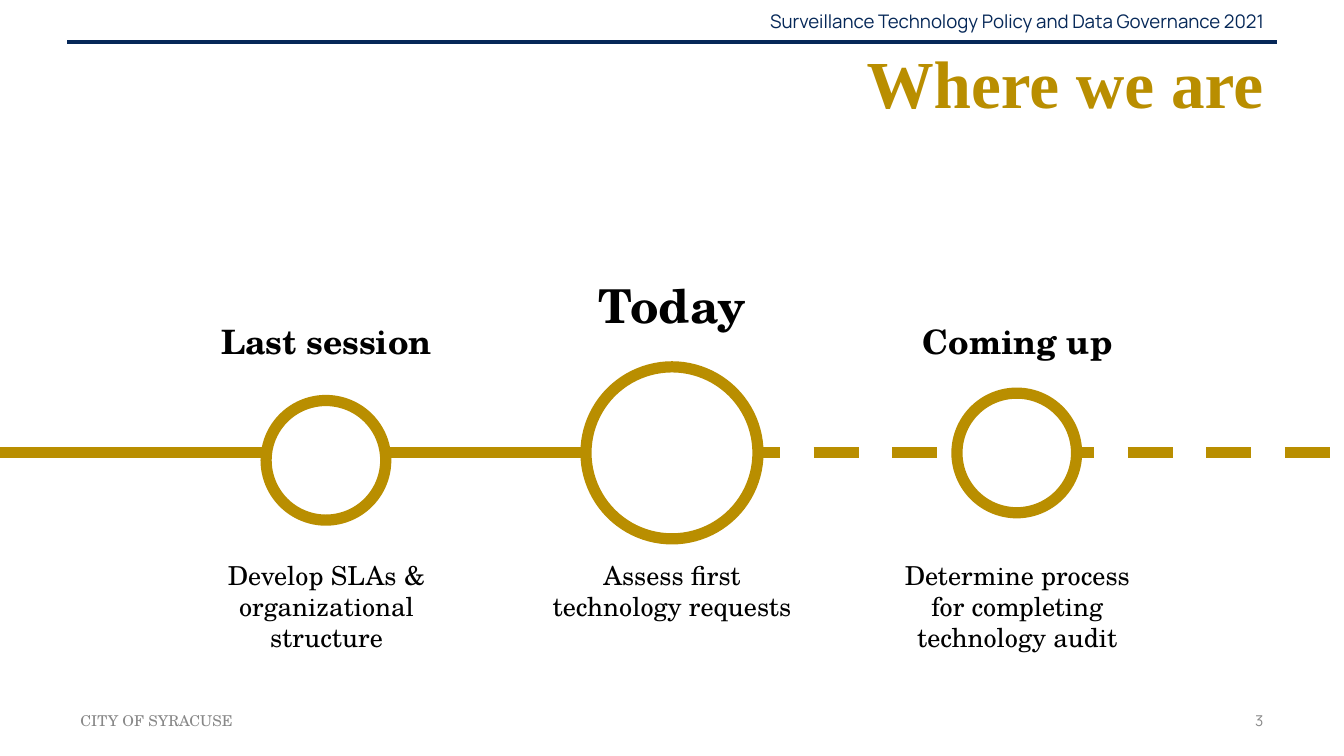
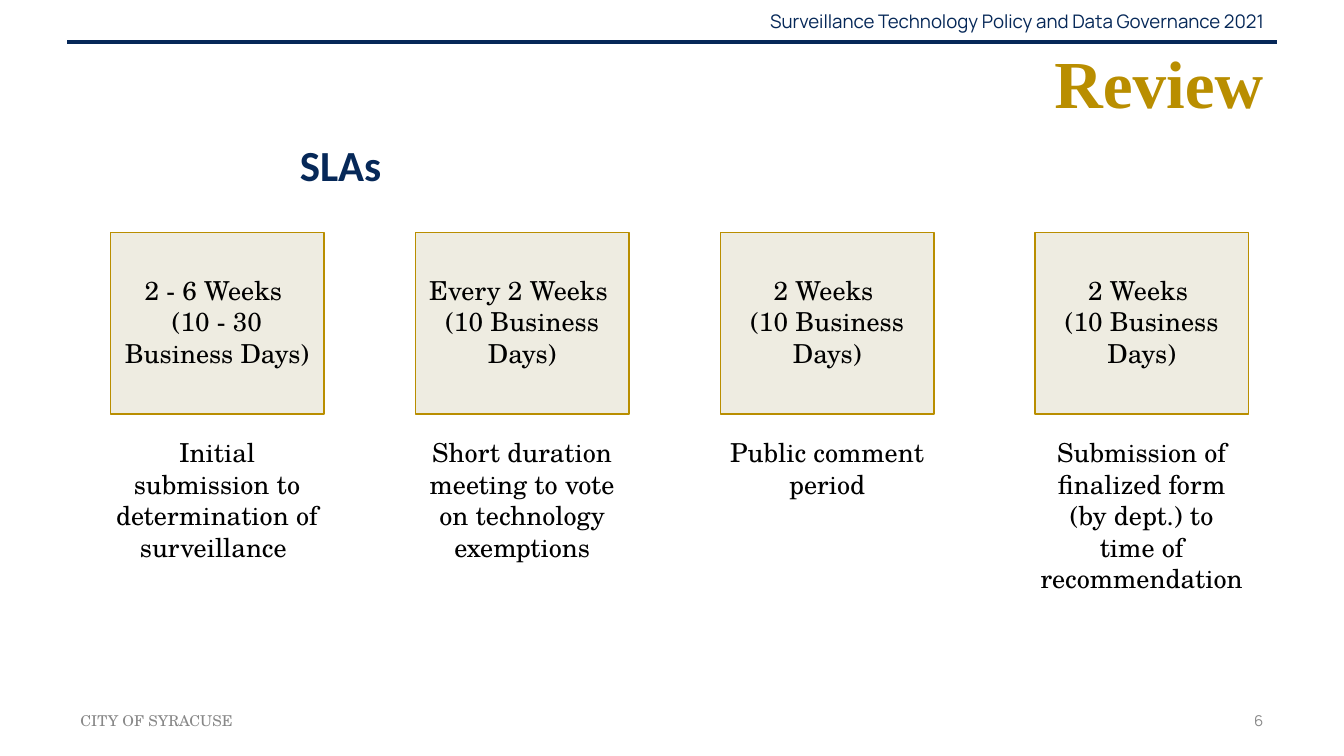
from lxml import etree
from pptx import Presentation
from pptx.dml.color import RGBColor
from pptx.enum.dml import MSO_LINE
from pptx.enum.shapes import MSO_CONNECTOR, MSO_SHAPE
from pptx.enum.text import MSO_ANCHOR, MSO_AUTO_SIZE, PP_ALIGN
from pptx.oxml.ns import qn
from pptx.util import Inches, Pt

LEFT, MID, RIGHT = PP_ALIGN.LEFT, PP_ALIGN.CENTER, PP_ALIGN.RIGHT
TOP, CENTER = MSO_ANCHOR.TOP, MSO_ANCHOR.MIDDLE
FIXED, GROW = MSO_AUTO_SIZE.NONE, MSO_AUTO_SIZE.SHAPE_TO_FIT_TEXT
OVAL, RECT = MSO_SHAPE.OVAL, MSO_SHAPE.RECTANGLE
STRAIGHT, DASH = MSO_CONNECTOR.STRAIGHT, MSO_LINE.DASH

NAVY = RGBColor(0x06, 0x28, 0x58)
GOLD = RGBColor(0xB9, 0x8E, 0x00)
GREY = RGBColor(0x88, 0x88, 0x88)
CREAM = RGBColor(0xEE, 0xEC, 0xE1)
WHITE = RGBColor(0xFF, 0xFF, 0xFF)
BLACK = RGBColor(0, 0, 0)
SERIF, SANS, HEAD, PLAIN = "TeX Gyre Schola", "Manrope", "Times New Roman", "Calibri"

# Grid of square cells: all places and sizes are in columns and rows
WIDE, HIGH = Inches(10), Inches(5.625)
COLS, ROWS = 100, 56.25


def cell(x, y, w, h):
    """Turn columns and rows into lengths on the slide."""
    return (round(x * WIDE / COLS), round(y * HIGH / ROWS),
            round(w * WIDE / COLS), round(h * HIGH / ROWS))


def write(frame, text, size=14, font=SERIF, color=BLACK, bold=False,
          align=MID, anchor=TOP, pad=0.1, fit=FIXED):
    """Fill a text frame; each line of the text is a paragraph."""
    frame.text = text
    frame.word_wrap, frame.auto_size = True, fit
    frame.vertical_anchor = anchor
    frame.margin_left = frame.margin_right = Inches(0.1)
    frame.margin_top = frame.margin_bottom = Inches(pad)
    for para in frame.paragraphs:
        para.alignment = align
        face = para.runs[0].font
        face.size, face.name, face.bold = Pt(size), font, bold
        face.color.rgb = color


class Deck:
    def __init__(self):
        self.show = Presentation()
        self.show.slide_width, self.show.slide_height = WIDE, HIGH
        self.slide = None

    def page(self, title, number, left):
        """Start a slide with its header, title and footer."""
        self.slide = self.show.slides.add_slide(self.show.slide_layouts[5])
        band = dict(anchor=CENTER, pad=0.05)
        self.text("Surveillance Technology Policy and Data Governance 2021",
                  52.1, 0.1, 42.9, 3, size=10, font=SANS, color=NAVY, align=RIGHT, **band)
        self.text(number, 71.7, 52.1, 23.3, 3, size=8, font=SANS, color=GREY,
                  align=RIGHT, **band)
        self.line(5, 95, 3.1, color=NAVY, width=2.25)
        self.text("CITY OF SYRACUSE", 5, 52.1, 23.3, 3, size=8, color=GREY,
                  align=LEFT, **band)
        head = self.slide.shapes.title
        head.left, head.top, head.width, head.height = cell(left, 2.9, 95 - left, 6.4)
        write(head.text_frame, title, size=36, font=HEAD, color=GOLD, bold=True,
              align=RIGHT, **band)

    def text(self, text, x, y, w, h, **style):
        box = self.slide.shapes.add_textbox(*cell(x, y, w, h))
        write(box.text_frame, text, **style)

    def line(self, start, end, y, color=GOLD, width=6, dash=None):
        x, y, w, _ = cell(start, y, end - start, 0)
        rule = self.slide.shapes.add_connector(STRAIGHT, x, y, x + w, y)
        rule.line.color.rgb, rule.line.width = color, Pt(width)
        if dash:
            rule.line.dash_style = dash
        etree.SubElement(rule.element.spPr, qn("a:effectLst"))

    def shape(self, kind, x, y, w, h, fill=WHITE, width=6):
        form = self.slide.shapes.add_shape(kind, *cell(x, y, w, h))
        form.shadow.inherit = False
        form.fill.solid()
        form.fill.fore_color.rgb = fill
        form.line.color.rgb, form.line.width = GOLD, Pt(width)

    def ring(self, mid, level, size):
        self.shape(OVAL, mid - size / 2, level - size / 2, size, size)

    def stop(self, mid, name, task, top=22.9, size=18, tall=6.7):
        """Put a name above and a task below a point in time."""
        left, wide = mid - 10.6, 21.2
        self.text(name, left, top, wide, 5, size=size, bold=True, fit=GROW)
        self.text(task, left, 40.6, wide, tall, fit=GROW)

    def card(self, left, time, task):
        """Draw a box with a time span and its step below."""
        self.shape(RECT, left, 17.3, 15.9, 13.5, fill=CREAM, width=0.75)
        for text, top in ((time, 19.4), (task, 31.5)):
            self.text(text, left - 0.65, top, 17.2, 9.1, fit=GROW)


def main():
    deck = Deck()

    # Timeline: solid for the past, dashed for what comes next
    deck.page("Where we are", "3", left=50)
    deck.line(-0.1, 43.6, 33.7)
    deck.ring(24.25, 34.25, 8.9)
    deck.line(54.7, 100.2, 33.7, dash=DASH)
    deck.ring(50, 33.7, 12.8)
    deck.ring(75.65, 33.7, 8.9)
    deck.stop(24.3, "Last session", "Develop SLAs & organizational structure")
    deck.stop(50, "Today", "Assess first technology requests", top=19.6, size=25)
    deck.stop(75.7, "Coming up", "Determine process for completing technology audit",
              tall=9.1)

    # Review: one card for each agreed time span
    deck.page("Review", "6", left=9.6)
    deck.text("SLAs", 7.3, 9.3, 36.1, 21.4, size=23, font=PLAIN, color=NAVY, bold=True)
    span = "2 Weeks \n(10 Business Days)"
    cards = (
        (8.2, "2 - 6 Weeks \n(10 - 30\nBusiness Days)",
         "Initial submission to determination of surveillance "),
        (30.9, "Every 2 Weeks \n(10 Business Days)",
         "Short duration meeting to vote on technology exemptions"),
        (53.6, span, "Public comment period"),
        (77, span, "Submission of finalized form (by dept.) to time of recommendation"),
    )
    for left, time, task in cards:
        deck.card(left, time, task)

    deck.show.save("out.pptx")


if __name__ == "__main__":
    main()
